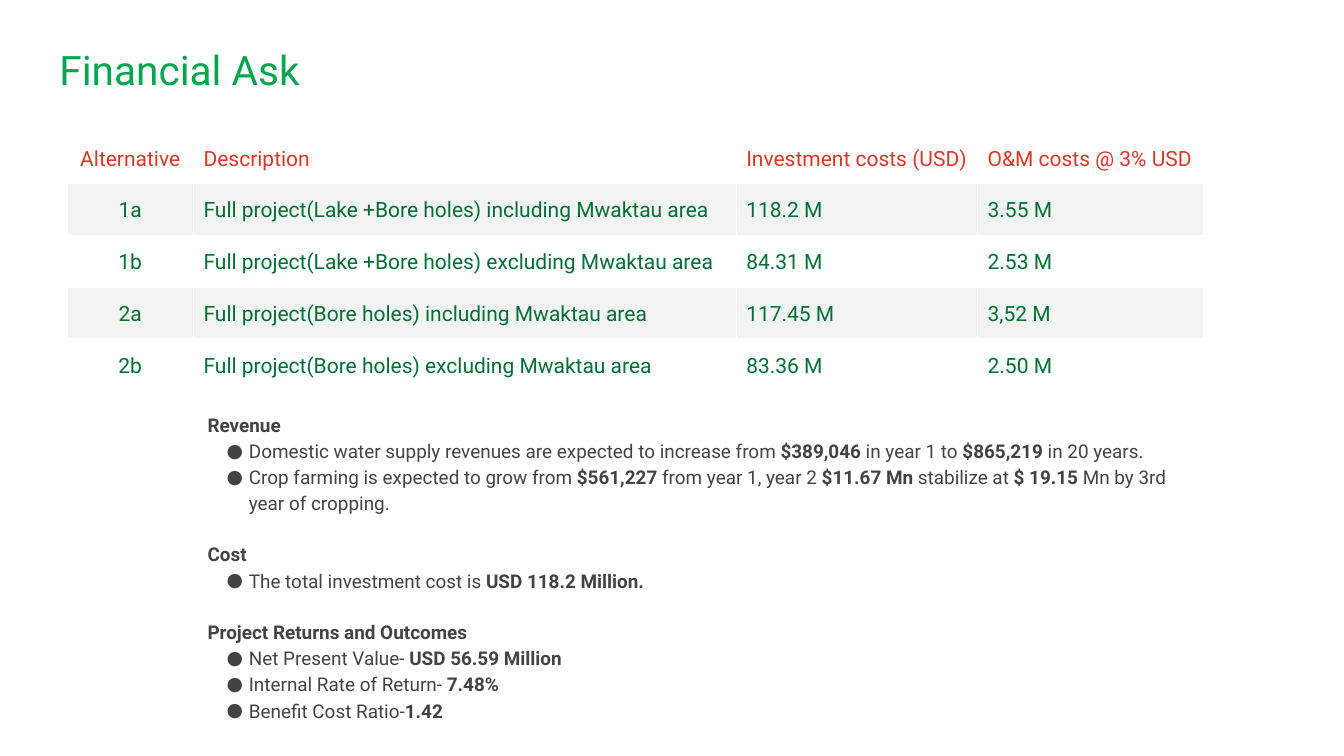
from dataclasses import dataclass

from lxml import etree
from pptx import Presentation
from pptx.dml.color import RGBColor
from pptx.enum import text
from pptx.oxml import ns
from pptx.util import Inches, Pt


@dataclass(frozen=True)
class Theme:
    face: str = "Roboto"
    green: str = "00A54F"
    dark: str = "006F35"
    red: str = "D83829"
    gray: str = "434343"
    white: str = "FFFFFF"
    band: str = "F3F3F3"
    title: int = 58
    cell: int = 30
    body: int = 27
    lead: float = 1.15
    gap: float = 36.5


THEME = Theme()

COSTS = [
    ("Alternative", "Description", "Investment costs (USD)", "O&M costs @ 3% USD"),
    ("1a", "Full project(Lake +Bore holes) including Mwaktau area", "118.2 M", "3.55 M"),
    ("1b", "Full project(Lake +Bore holes) excluding Mwaktau area", "84.31 M", "2.53 M"),
    ("2a", "Full project(Bore holes) including Mwaktau area", "117.45 M", "3,52 M"),
    ("2b", "Full project(Bore holes) excluding Mwaktau area", "83.36 M", "2.50 M"),
]
WIDTHS = [2.51, 10.77, 4.79, 4.47]
HEIGHT = 1.03

NOTES = {
    "Revenue": [
        "Domestic water supply revenues are expected to increase from "
        "*$389,046 *in year 1 to *$865,219 *in 20 years.",
        "Crop farming is expected to grow from *$561,227 *from year 1, year 2 "
        "*$11.67 Mn *stabilize at *$ 19.15 *Mn by 3rd year of cropping.",
    ],
    "Cost": ["The total investment cost is *USD 118.2 Million.*"],
    "Project Returns and Outcomes": [
        "Net Present Value- *USD 56.59 Million*",
        "Internal Rate of Return- *7.48%*",
        "Benefit Cost Ratio-*1.42*",
    ],
}


def assign(item, form):
    for name, value in form.items():
        setattr(item, name, value)


def add_run(para, words, size, color, bold=False):
    run = para.add_run()
    run.text = words
    assign(run.font, {"name": THEME.face, "size": Pt(size), "bold": bold})
    run.font.color.rgb = RGBColor.from_string(color)


def set_frame(item, across, down):
    assign(item, {
        "margin_left": Inches(across), "margin_right": Inches(across),
        "margin_top": Inches(down), "margin_bottom": Inches(down),
    })


def add_box(slide, left, top, width, height, inset):
    box = slide.shapes.add_textbox(*map(Inches, (left, top, width, height)))
    frame = box.text_frame
    frame.word_wrap = True
    set_frame(frame, inset, inset)
    return frame


def set_edge(cell):
    props = cell._tc.get_or_add_tcPr()
    for side in ("lnL", "lnR", "lnT", "lnB"):
        line = etree.SubElement(props, ns.qn(f"a:{side}"), w=str(Pt(0.75)))
        fill = etree.SubElement(line, ns.qn("a:solidFill"))
        etree.SubElement(fill, ns.qn("a:srgbClr"), val=THEME.white)


def fill_cell(cell, words, color, back, align):
    set_edge(cell)
    cell.fill.solid()
    cell.fill.fore_color.rgb = RGBColor.from_string(back)
    set_frame(cell, 0.2, 0.1)
    cell.vertical_anchor = text.MSO_ANCHOR.MIDDLE
    para = cell.text_frame.paragraphs[0]
    assign(para, {"alignment": align, "line_spacing": THEME.lead})
    add_run(para, words, THEME.cell, color)


def add_costs(slide):
    size = (sum(WIDTHS), HEIGHT * len(COSTS))
    grid = slide.shapes.add_table(
        len(COSTS), len(WIDTHS), *map(Inches, (1.33, 2.6, *size))).table
    assign(grid, {"first_row": False, "horz_banding": False})
    for col, width in zip(grid.columns, WIDTHS):
        col.width = Inches(width)
    for row, values in enumerate(COSTS):
        grid.rows[row].height = Inches(HEIGHT)
        color = THEME.dark if row else THEME.red
        back = THEME.band if row % 2 else THEME.white
        for col, words in enumerate(values):
            align = text.PP_ALIGN.LEFT if col else text.PP_ALIGN.CENTER
            fill_cell(grid.cell(row, col), words, color, back, align)


def set_indent(para, left, first):
    props = para._p.get_or_add_pPr()
    props.set("marL", str(Inches(left)))
    props.set("indent", str(Inches(first)))
    return props


def add_head(para, words, gap):
    set_indent(para, 1.18, -1)
    assign(para, {"line_spacing": THEME.lead, "space_before": Pt(gap)})
    add_run(para, words, THEME.body, THEME.gray, True)


def add_bullet(para, words):
    props = set_indent(para, 1, -0.44)
    para.line_spacing = THEME.lead
    tint = etree.SubElement(props, ns.qn("a:buClr"))
    etree.SubElement(tint, ns.qn("a:srgbClr"), val=THEME.gray)
    etree.SubElement(props, ns.qn("a:buFont"), typeface=THEME.face)
    etree.SubElement(props, ns.qn("a:buChar"), char="●")
    for place, part in enumerate(words.split("*")):
        if part:
            add_run(para, part, THEME.body, THEME.gray, place % 2 == 1)


def add_notes(slide):
    frame = add_box(slide, 3.84, 8.03, 20.03, 6.41, 0.1)
    for place, (head, points) in enumerate(NOTES.items()):
        para = frame.add_paragraph() if place else frame.paragraphs[0]
        add_head(para, head, THEME.gap if place else 0)
        for point in points:
            add_bullet(frame.add_paragraph(), point)


def add_title(slide):
    frame = add_box(slide, 0.91, 0.63, 24.85, 1.67, 0.27)
    add_run(frame.paragraphs[0], "Financial Ask", THEME.title, THEME.green)


def main():
    deck = Presentation()
    assign(deck, {"slide_width": Inches(26.67), "slide_height": Inches(15)})
    slide = deck.slides.add_slide(deck.slide_layouts[6])
    add_title(slide)
    add_costs(slide)
    add_notes(slide)
    deck.save("out.pptx")


if __name__ == "__main__":
    main()
